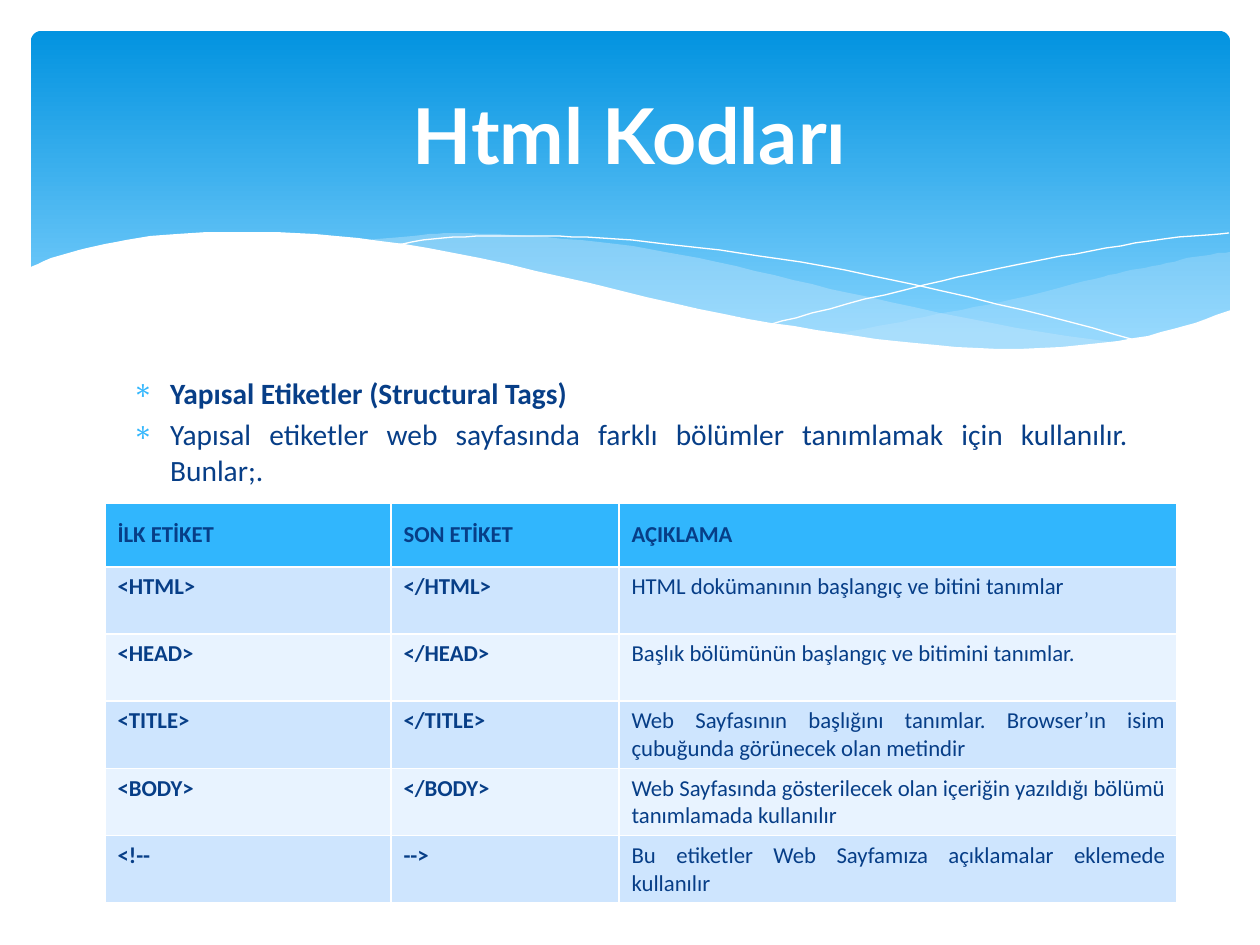
"""Build the slide on structural HTML tags: wave banner, bullets and tag table."""
from dataclasses import dataclass

from lxml import etree
from pptx import Presentation
from pptx import util as u
from pptx.dml.color import RGBColor
from pptx.enum import shapes, text
from pptx.oxml import ns


@dataclass(frozen=True)
class Theme:
    ink: str = "073E87"
    white: str = "FFFFFF"
    accent: str = "31B6FD"
    mist: str = "C6E7FC"
    sky: tuple = ("0293E0", "83D3FE")
    bands: tuple = ("CEE5FE", "E8F3FF")
    body: str = "Calibri"
    head: str = "Lato"
    big: float = 44
    mid: float = 16.8
    small: float = 13


T = Theme()
PX = 914400 / 126

TITLE = "Html Kodları"
POINTS = [
    ("Yapısal Etiketler (Structural Tags)", True),
    ("Yapısal etiketler web sayfasında farklı bölümler tanımlamak için kullanılır. Bunlar;.", False),
]
ROWS = [
    ("İLK ETİKET", "SON ETİKET", "AÇIKLAMA"),
    ("<HTML>", "</HTML>", "HTML dokümanının başlangıç ve bitini tanımlar"),
    ("<HEAD>", "</HEAD>", "Başlık bölümünün başlangıç ve bitimini tanımlar."),
    ("<TITLE>", "</TITLE>",
     "Web Sayfasının başlığını tanımlar. Browser’ın isim çubuğunda görünecek olan metindir"),
    ("<BODY>", "</BODY>",
     "Web Sayfasında gösterilecek olan içeriğin yazıldığı bölümü tanımlamada kullanılır"),
    ("<!--", "-->", "Bu etiketler Web Sayfamıza açıklamalar eklemede kullanılır"),
]
COLS = (286, 228, 558)
HEAD_H, ROW_H = 64, 67

RIGHT = [
    [(1230, 252), (1194, 257), (1160, 265), (1123, 272), (1085, 281), (1014, 299),
     (949, 312), (890, 324), (833, 334)],
    [(833, 334), (888, 341), (954, 348), (1026, 350), (1099, 345), (1160, 334), (1230, 311)],
]
MIDDLE = [
    [(1125, 344), (1017, 328), (890, 302), (793, 280), (699, 258), (616, 244),
     (529, 236), (455, 233), (413, 236), (360, 241)],
    [(360, 241), (431, 251), (509, 266), (566, 280), (668, 302), (757, 321), (857, 338),
     (942, 348), (1031, 350), (1080, 349), (1125, 344)],
]
FALL = [(389, 246), (433, 239), (488, 236), (546, 236), (616, 239), (701, 248),
        (801, 262), (916, 285), (1047, 316), (1143, 343)]
RISE = [(772, 324), (847, 304), (942, 281), (1016, 265), (1091, 251), (1164, 239), (1229, 233)]
FRONT = [
    [(1231, 310), (1184, 326), (1118, 341), (1019, 349), (915, 343), (816, 330), (699, 309),
     (563, 277), (428, 248), (315, 234), (223, 232), (150, 236), (96, 246), (58, 256), (29, 268)],
    [(29, 415), (1231, 415)],
]


def emu(*nums):
    return [u.Emu(round(n * PX)) for n in nums]


def rgb(code):
    return RGBColor.from_string(code)


def smooth(knots, steps=5):
    if len(knots) < 3:
        return knots
    ends = [knots[0], *knots, knots[-1]]
    out = []
    for a, b, c, d in zip(ends, ends[1:], ends[2:], ends[3:]):
        for t in (i / steps for i in range(steps)):
            out.append(tuple(
                (2 * q + (r - p) * t + (2 * p - 5 * q + 4 * r - s) * t ** 2
                 + (3 * q - p - 3 * r + s) * t ** 3) / 2
                for p, q, r, s in zip(a, b, c, d)))
    return out + [knots[-1]]


def wave(slide, parts, fill=None, alpha=100):
    dots = [dot for part in parts for dot in smooth(part)]
    pen = slide.shapes.build_freeform(*dots[0], scale=PX)
    pen.add_line_segments(dots[1:], close=fill is not None)
    shape = pen.convert_to_shape()
    shape.shadow.inherit = False
    if fill is None:
        shape.fill.background()
        shape.line.color.rgb = rgb(T.white)
        shape.line.width = u.Pt(0)
        return
    shape.line.fill.background()
    shape.fill.solid()
    shape.fill.fore_color.rgb = rgb(fill)
    if alpha < 100:
        tone = shape.fill._xPr.find(".//" + ns.qn("a:srgbClr"))
        etree.SubElement(tone, ns.qn("a:alpha"), val=str(alpha * 1000))


def write(para, words, size, color, bold, font, align):
    para.alignment = align
    run = para.add_run()
    run.text = words
    run.font.size = u.Pt(size)
    run.font.bold = bold
    run.font.name = font
    run.font.color.rgb = rgb(color)


def bullet(para):
    props = para._p.get_or_add_pPr()
    props.set("marL", str(u.Inches(0.3)))
    props.set("indent", str(-u.Inches(0.3)))
    tint = etree.SubElement(props, ns.qn("a:buClr"))
    etree.SubElement(tint, ns.qn("a:srgbClr"), val=T.accent)
    etree.SubElement(props, ns.qn("a:buChar"), char="∗")


def banner(slide):
    box = slide.shapes.add_shape(shapes.MSO_SHAPE.ROUNDED_RECTANGLE, *emu(31, 31, 1199, 340))
    box.adjustments[0] = 0.03
    box.shadow.inherit = False
    box.line.fill.background()
    box.fill.gradient()
    box.fill.gradient_angle = 270
    for stop, tone, place in zip(box.fill.gradient_stops, T.sky, (0, 0.9)):
        stop.color.rgb = rgb(tone)
        stop.position = place
    wave(slide, RIGHT, T.mist, 29)
    wave(slide, MIDDLE, T.mist, 40)
    wave(slide, [FALL])
    wave(slide, [RISE])
    wave(slide, FRONT, T.white)


def frame(slide, *place):
    body = slide.shapes.add_textbox(*emu(*place)).text_frame
    body.word_wrap = True
    return body


def words(slide):
    body = frame(slide, 120, 369, 1020, 113)
    for i, (line, bold) in enumerate(POINTS):
        para = body.add_paragraph() if i else body.paragraphs[0]
        write(para, line, T.mid, T.ink, bold, T.body, text.PP_ALIGN.JUSTIFY)
        para.space_before = u.Pt(3.4)
        bullet(para)
    head = frame(slide, 63, 47, 1134, 173)
    head.vertical_anchor = text.MSO_ANCHOR.MIDDLE
    write(head.paragraphs[0], TITLE, T.big, T.white, True, T.head, text.PP_ALIGN.CENTER)


def tags(slide):
    high = HEAD_H + ROW_H * (len(ROWS) - 1)
    grid = slide.shapes.add_table(len(ROWS), len(COLS), *emu(105, 503, sum(COLS), high)).table
    for col, wide in zip(grid.columns, emu(*COLS)):
        col.width = wide
    for r, row in enumerate(ROWS):
        grid.rows[r].height = emu(ROW_H if r else HEAD_H)[0]
        for c, label in enumerate(row):
            cell = grid.cell(r, c)
            cell.fill.solid()
            cell.fill.fore_color.rgb = rgb(T.bands[(r - 1) % 2] if r else T.accent)
            cell.vertical_anchor = text.MSO_ANCHOR.TOP if r else text.MSO_ANCHOR.MIDDLE
            write(cell.text_frame.paragraphs[0], label, T.small, T.ink,
                  r == 0 or c < 2, T.body, text.PP_ALIGN.JUSTIFY)


def main():
    deck = Presentation()
    deck.slide_width, deck.slide_height = emu(1260, 945)
    slide = deck.slides.add_slide(deck.slide_layouts[6])
    banner(slide)
    words(slide)
    tags(slide)
    deck.save("out.pptx")


if __name__ == "__main__":
    main()
